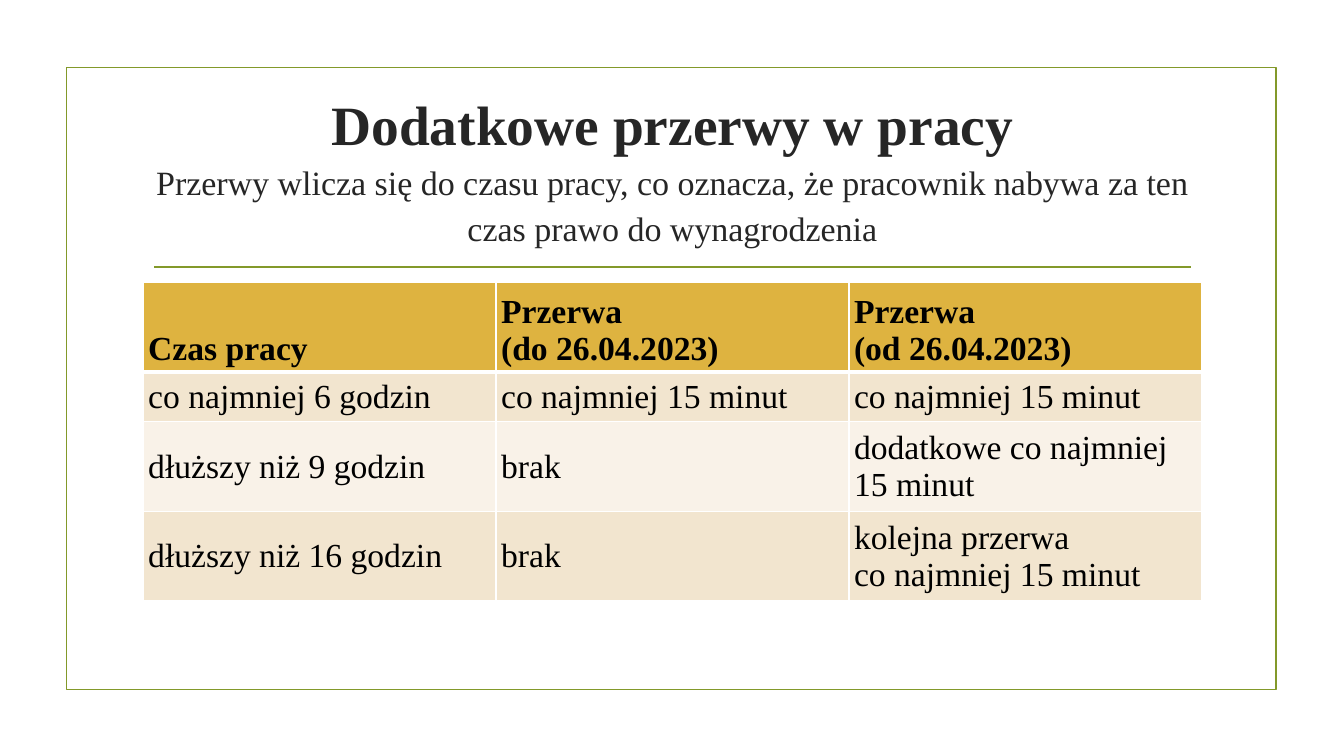
import pptx
import pptx.dml.color
import pptx.enum.shapes
import pptx.enum.text
import pptx.oxml
import pptx.oxml.ns
import pptx.util
from pptx.util import Inches

FONT = "Times New Roman"
OLIVE, GOLD, SAND, CREAM = "83992A", "DEB340", "F2E5CF", "F9F2E8"
WHITE, BLACK, CHARCOAL = "FFFFFF", "000000", "262626"
ANCHOR = pptx.enum.text.MSO_ANCHOR

# "\n" starts a new paragraph, "\v" breaks a line inside one
BREAKS = [
    ["Czas pracy", "Przerwa\n(do 26.04.2023)", "Przerwa\n(od 26.04.2023)"],
    ["co najmniej 6 godzin", "co najmniej 15 minut", "co najmniej 15 minut"],
    ["dłuższy niż 9 godzin", "brak", "dodatkowe co najmniej \v15 minut"],
    ["dłuższy niż 16 godzin", "brak", "kolejna przerwa \vco najmniej 15 minut"],
]
ROW_HEIGHTS = [0.82, 0.46, 0.82, 0.82]
ROW_FILLS = [GOLD, SAND, CREAM, SAND]


def color(value):
    return pptx.dml.color.RGBColor.from_string(value)


def add_run(paragraph, text, size, text_color, bold=False):
    run = paragraph.add_run()
    run.text = text
    run.font.name = FONT
    run.font.size = pptx.util.Pt(size)
    run.font.bold = bold
    run.font.color.rgb = color(text_color)


def set_line(shape):
    shape.line.color.rgb = color(OLIVE)
    shape.line.width = pptx.util.Pt(1.25)


def add_frame(slide):
    frame = slide.shapes.add_shape(
        pptx.enum.shapes.MSO_SHAPE.RECTANGLE,
        Inches(0.66), Inches(0.67), Inches(12), Inches(6.17))
    frame.shadow.inherit = False
    frame.fill.background()
    set_line(frame)


def add_rule(slide):
    rule = slide.shapes.add_connector(
        pptx.enum.shapes.MSO_CONNECTOR.STRAIGHT,
        Inches(1.53), Inches(2.65), Inches(11.81), Inches(2.65))
    set_line(rule)
    properties = rule._element.spPr
    properties.append(pptx.oxml.parse_xml(
        f'<a:effectLst {pptx.oxml.ns.nsdecls("a")}/>'))


def add_title(slide):
    box = slide.shapes.add_textbox(
        Inches(1.42), Inches(0.78), Inches(10.5), Inches(1.72))
    text_frame = box.text_frame
    text_frame.word_wrap = True
    text_frame.vertical_anchor = ANCHOR.MIDDLE
    paragraph = text_frame.paragraphs[0]
    paragraph.alignment = pptx.enum.text.PP_ALIGN.CENTER
    paragraph.line_spacing = 1.12
    add_run(paragraph, "Dodatkowe przerwy w pracy", 39.6, CHARCOAL, True)
    paragraph.add_line_break()
    add_run(paragraph, "Przerwy wlicza się do czasu pracy, co oznacza, że pracownik "
            "nabywa za ten czas prawo do wynagrodzenia", 24.3, CHARCOAL)


def set_borders(cell, top, bottom):
    properties = cell._tc.get_or_add_tcPr()
    for side, width in (("L", 1), ("R", 1), ("T", top), ("B", bottom)):
        properties.append(pptx.oxml.parse_xml(
            f'<a:ln{side} {pptx.oxml.ns.nsdecls("a")} w="{pptx.util.Pt(width)}">'
            f'<a:solidFill><a:srgbClr val="{WHITE}"/></a:solidFill></a:ln{side}>'))


def fill_cell(cell, text, row):
    header = row == 0
    set_borders(cell, 3 if row == 1 else 1, 3 if header else 1)
    cell.fill.solid()
    cell.fill.fore_color.rgb = color(ROW_FILLS[row])
    cell.vertical_anchor = ANCHOR.BOTTOM if header else ANCHOR.MIDDLE
    cell.margin_left = cell.margin_right = cell.margin_top = Inches(0.05)
    cell.margin_bottom = Inches(0.04)
    for number, paragraph_text in enumerate(text.split("\n")):
        text_frame = cell.text_frame
        paragraph = text_frame.add_paragraph() if number else text_frame.paragraphs[0]
        for line_number, line in enumerate(paragraph_text.split("\v")):
            if line_number:
                paragraph.add_line_break()
            add_run(paragraph, line, 24, BLACK, header)


def add_breaks_table(slide):
    table = slide.shapes.add_table(
        len(BREAKS), len(BREAKS[0]), Inches(1.42), Inches(2.8),
        Inches(10.5), Inches(sum(ROW_HEIGHTS))).table
    for row, texts in enumerate(BREAKS):
        table.rows[row].height = Inches(ROW_HEIGHTS[row])
        for column, text in enumerate(texts):
            fill_cell(table.cell(row, column), text, row)


def main():
    presentation = pptx.Presentation()
    presentation.slide_width = Inches(13.33)
    presentation.slide_height = Inches(7.5)
    slide = presentation.slides.add_slide(presentation.slide_layouts[6])

    # Frame and heading
    add_frame(slide)
    add_title(slide)
    add_rule(slide)

    # Table of breaks by working time
    add_breaks_table(slide)
    presentation.save("out.pptx")


if __name__ == "__main__":
    main()
